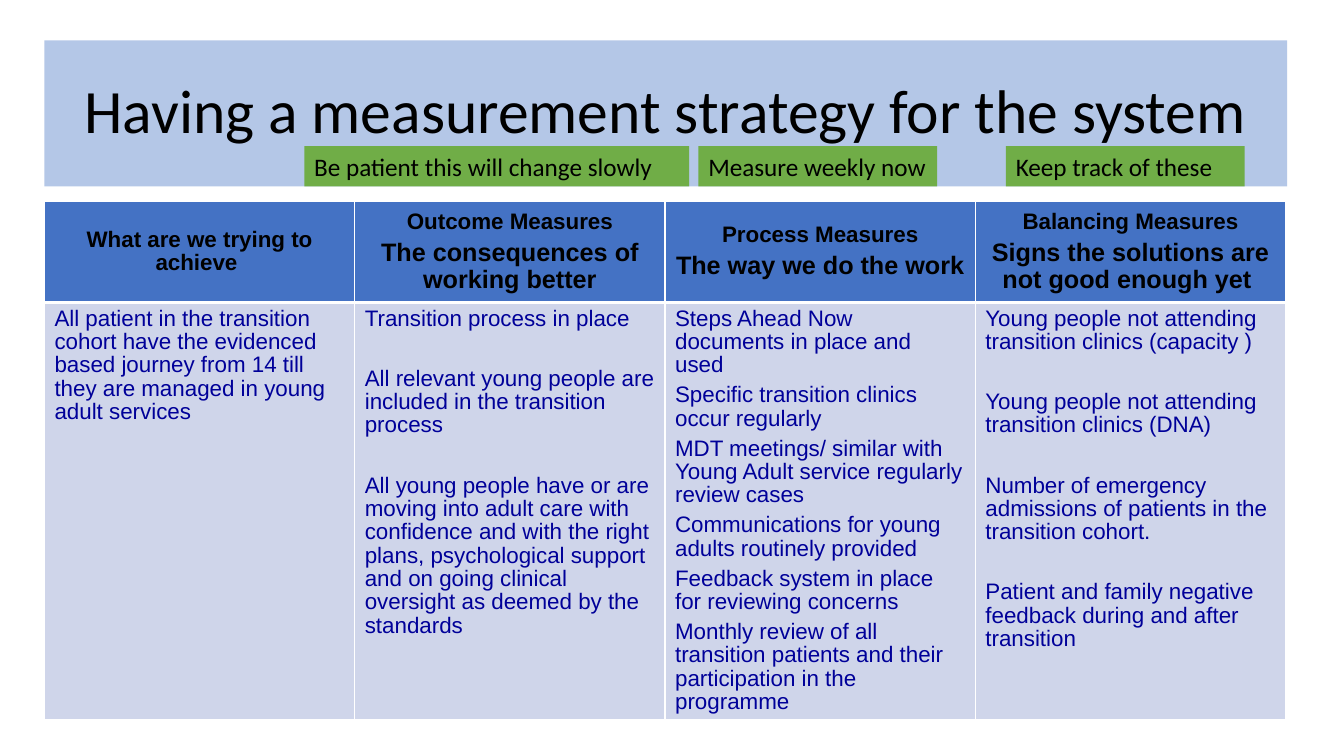
from collections import namedtuple

from lxml.etree import SubElement
from pptx import Presentation
from pptx.dml.color import RGBColor
from pptx.enum.shapes import MSO_SHAPE
from pptx.enum.text import MSO_ANCHOR, PP_ALIGN
from pptx.oxml.ns import qn
from pptx.util import Cm, Pt

Box = namedtuple("Box", "left top width height")

BLACK, WHITE, NAVY = "000000", "FFFFFF", "000099"
BANNER_BLUE, HEADER_BLUE, BODY_BLUE, GREEN = "B4C7E7", "4472C4", "CFD5EA", "70AD47"

TITLE = "Having a measurement strategy for the system"
# Text, left offset within the banner and width, in centimetres
LABELS = [
    ("Be patient this will change slowly", 6.55, 9.7),
    ("Measure weekly now", 16.48, 6.02),
    ("Keep track of these", 24.23, 6.02),
]
LABEL_HEIGHT = 1.02

LIST_GAP, WIDE_GAP = 4.7, 26.2
# Heading, subheading, gap between entries in points, entries
MEASURES = [
    ("What are we trying to achieve ", None, LIST_GAP, [
        "All patient in the transition cohort have the evidenced based journey "
        "from 14 till they are managed in young adult services",
    ]),
    ("Outcome Measures", "The consequences of working better", WIDE_GAP, [
        "Transition process in place",
        "All relevant young people are included in the transition process",
        "All young people have or are moving into adult care with confidence and "
        "with the right plans, psychological support and on going clinical "
        "oversight as deemed by the standards",
    ]),
    ("Process Measures", "The way we do the work", LIST_GAP, [
        "Steps Ahead Now documents in place and used",
        "Specific transition clinics occur regularly",
        "MDT meetings/ similar with Young Adult service regularly review cases",
        "Communications for young adults routinely provided",
        "Feedback system in place for reviewing concerns",
        "Monthly review of all transition patients and their participation in the programme",
    ]),
    ("Balancing Measures", "Signs the solutions are not good enough yet ", WIDE_GAP, [
        "Young people not attending transition clinics (capacity )",
        "Young people not attending transition clinics (DNA)",
        "Number of emergency admissions of patients in the transition cohort.",
        "Patient and family negative feedback during and after transition",
    ]),
]
HEADER_HEIGHT = 2.54


def rgb(value):
    return RGBColor.from_string(value)


def style(paragraph, font_name, size, color, align=PP_ALIGN.LEFT, bold=False):
    font = paragraph.font
    font.name, font.size, font.bold = font_name, Pt(size), bold
    font.color.rgb = rgb(color)
    paragraph.alignment = align


def add_panel(slide, box, fill, text, size, align):
    """Add a filled, borderless rectangle holding one line of black text."""
    panel = slide.shapes.add_shape(MSO_SHAPE.RECTANGLE, *(Cm(length) for length in box))
    panel.shadow.inherit = False
    panel.fill.solid()
    panel.fill.fore_color.rgb = rgb(fill)
    panel.line.fill.background()
    frame = panel.text_frame
    frame.word_wrap = True
    frame.vertical_anchor = MSO_ANCHOR.MIDDLE
    paragraph = frame.paragraphs[0]
    paragraph.text = text
    style(paragraph, "Calibri", size, BLACK, align)
    return panel


def add_banner(slide, box):
    title = add_panel(slide, box, BANNER_BLUE, TITLE, 44, PP_ALIGN.CENTER)
    title.text_frame.paragraphs[0].line_spacing = 0.9
    label_top = box.top + box.height - LABEL_HEIGHT
    for text, offset, width in LABELS:
        label_box = Box(box.left + offset, label_top, width, LABEL_HEIGHT)
        label = add_panel(slide, label_box, GREEN, text, 18, PP_ALIGN.LEFT)
        label.text_frame.margin_right = 0


def format_cell(cell, fill, bottom_width):
    """Give a cell its fill and white borders."""
    properties = cell._tc.get_or_add_tcPr()
    for tag, width in (("a:lnL", 1), ("a:lnR", 1), ("a:lnT", 1), ("a:lnB", bottom_width)):
        border = SubElement(properties, qn(tag), w=str(Pt(width)))
        solid = SubElement(border, qn("a:solidFill"))
        SubElement(solid, qn("a:srgbClr"), val=WHITE)
    cell.fill.solid()
    cell.fill.fore_color.rgb = rgb(fill)


def write_cell(cell, entries, gap, color, align=PP_ALIGN.LEFT, bold=False):
    """Write (text, size) entries as paragraphs separated by a gap in points."""
    frame = cell.text_frame
    for index, (text, size) in enumerate(entries):
        paragraph = frame.add_paragraph() if index else frame.paragraphs[0]
        paragraph.text = text
        paragraph.line_spacing = 0.94
        paragraph.space_before = Pt(gap if index else 0)
        style(paragraph, "Arial", size, color, align, bold)


def add_measures_table(slide, box):
    table = slide.shapes.add_table(
        2, len(MEASURES), *(Cm(length) for length in box)).table
    table.rows[0].height = Cm(HEADER_HEIGHT)
    table.rows[1].height = Cm(box.height - HEADER_HEIGHT)
    for index, (heading, subheading, gap, entries) in enumerate(MEASURES):
        table.columns[index].width = Cm(box.width / len(MEASURES))
        header, body = table.cell(0, index), table.cell(1, index)
        format_cell(header, HEADER_BLUE, 3)
        header.vertical_anchor = MSO_ANCHOR.MIDDLE
        headings = [(heading, 16)] + ([(subheading, 18)] if subheading else [])
        write_cell(header, headings, LIST_GAP, BLACK, PP_ALIGN.CENTER, True)
        format_cell(body, BODY_BLUE, 1)
        body.margin_right = Cm(0.27)
        write_cell(body, [(entry, 16) for entry in entries], gap, NAVY)


def main():
    presentation = Presentation()
    presentation.slide_width, presentation.slide_height = Cm(33.87), Cm(19.05)
    slide = presentation.slides.add_slide(presentation.slide_layouts[6])
    add_banner(slide, Box(1.12, 1.02, 31.32, 3.68))
    add_measures_table(slide, Box(1.12, 5.08, 31.28, 13))
    presentation.save("out.pptx")


if __name__ == "__main__":
    main()
